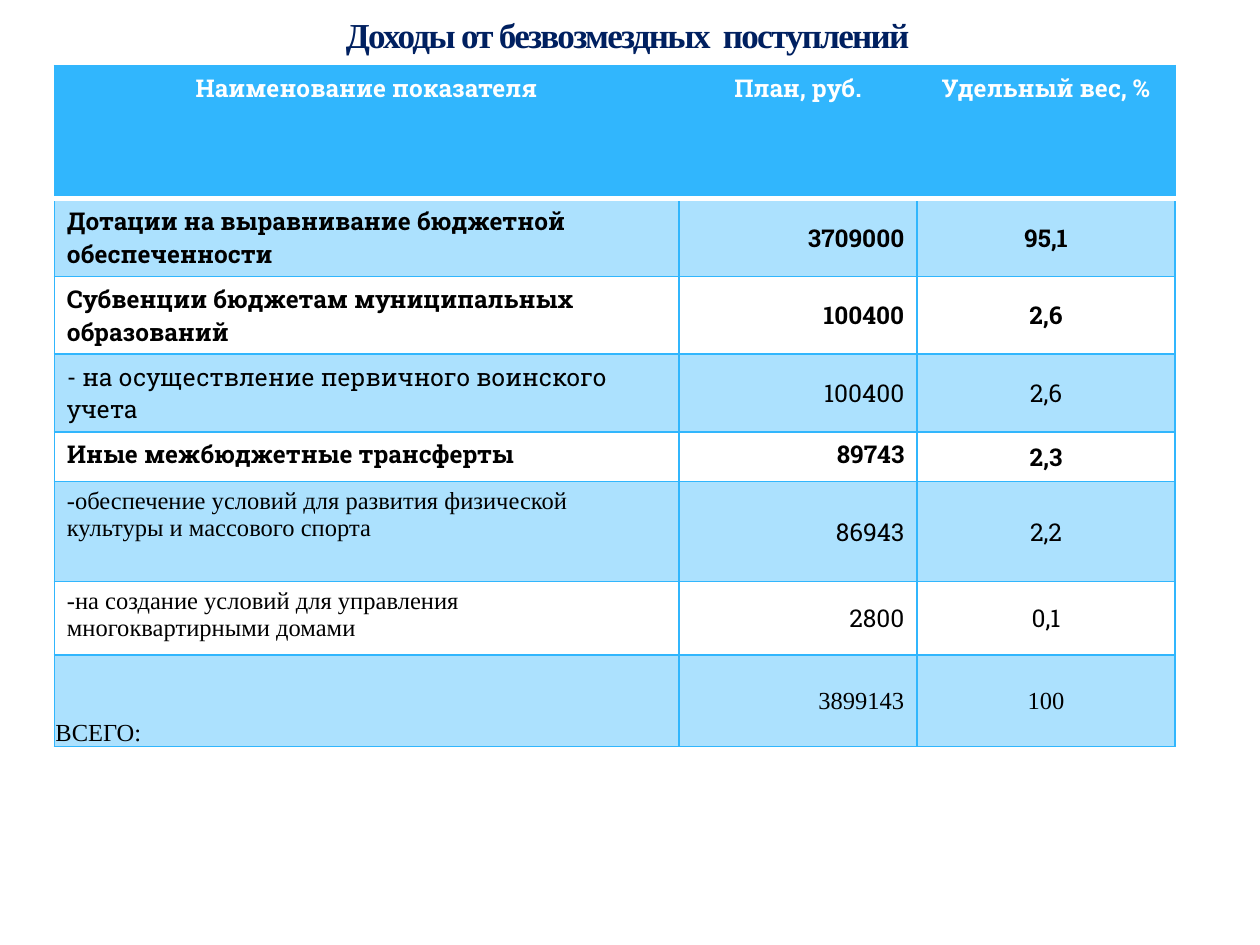
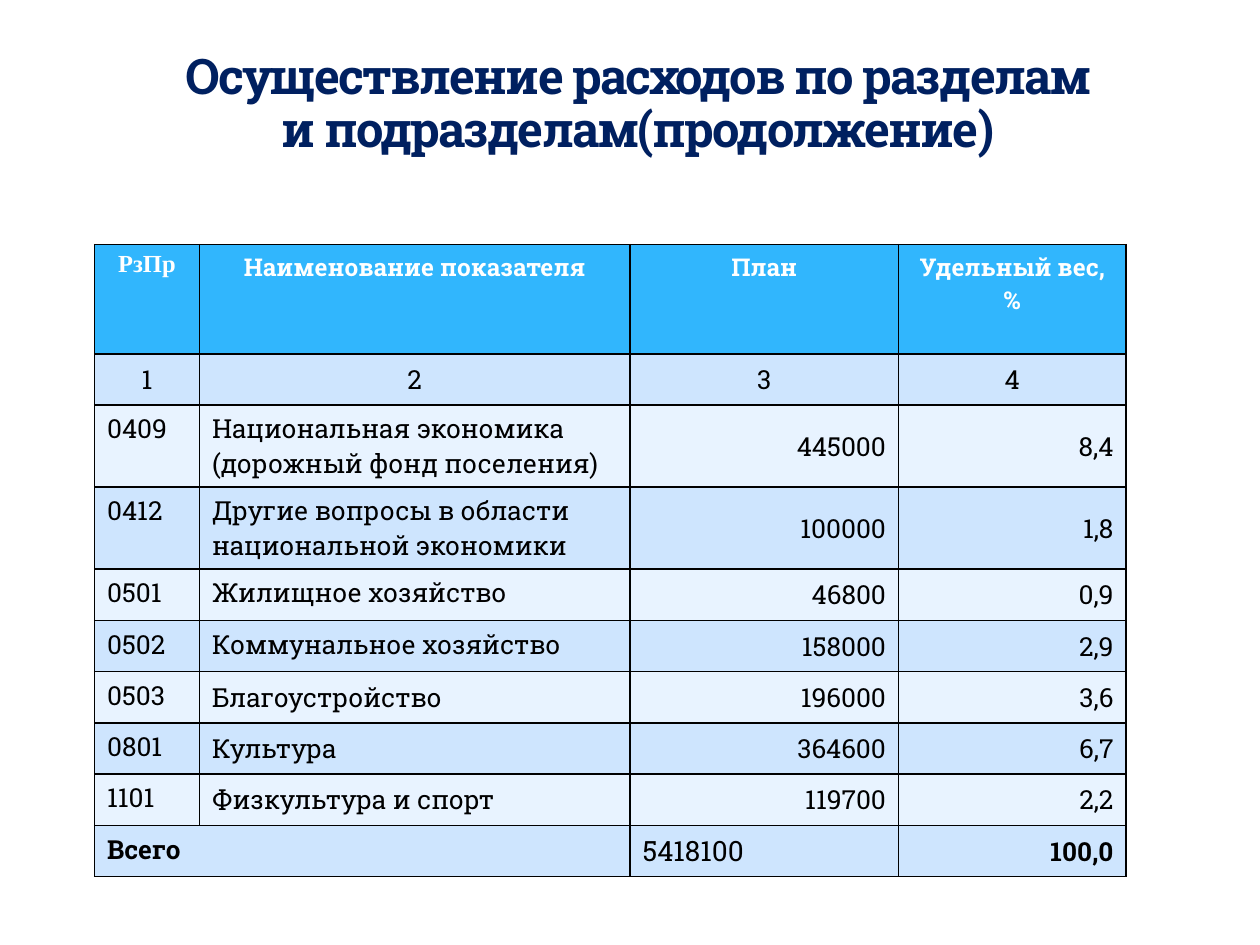
from dataclasses import dataclass, replace

from lxml import etree
from pptx import Presentation
from pptx import util as u
from pptx.dml import color
from pptx.enum import text
from pptx.oxml import ns

Pt = u.Pt
COLORS = {"title": "002060", "head": "31B6FD", "white": "FFFFFF", "ink": "000000",
          "band_dark": "CEE5FE", "band_light": "E8F3FF"}
SLAB, TIMES = "Roboto Slab", "Times New Roman"
ALIGN = {"l": text.PP_ALIGN.LEFT, "c": text.PP_ALIGN.CENTER, "r": text.PP_ALIGN.RIGHT}
ANCHOR = {"t": text.MSO_ANCHOR.TOP, "m": text.MSO_ANCHOR.MIDDLE, "b": text.MSO_ANCHOR.BOTTOM}


@dataclass(frozen=True)
class Style:
    size: float
    font: str = SLAB
    bold: bool = False
    color: str = "ink"
    align: str = "l"
    anchor: str = "t"


@dataclass(frozen=True)
class Entry:
    words: str
    style: Style


@dataclass(frozen=True)
class Band:
    """One table row: its entries, height and fill (None leaves it clear)."""
    entries: list[Entry]
    height: float
    fill: str | None
    opacity: int = 100


@dataclass(frozen=True)
class Grid:
    left: float
    top: float
    columns: list[float]
    bands: list[Band]
    border: str


HEADING = Style(14, bold=True, color="white", align="c")


def rgb(name: str) -> color.RGBColor:
    return color.RGBColor.from_string(COLORS[name])


def write(frame, entry: Entry):
    """Write one styled run and return it."""
    style = entry.style
    paragraph = frame.paragraphs[0]
    paragraph.alignment = ALIGN[style.align]
    run = paragraph.add_run()
    run.text = entry.words
    run.font.size, run.font.name, run.font.bold = Pt(style.size), style.font, style.bold
    run.font.color.rgb = rgb(style.color)
    return run


def add_title(slide, entry: Entry, left: float, top: float, height: float) -> None:
    frame = slide.shapes.add_textbox(Pt(left), Pt(top), Pt(553), Pt(height)).text_frame
    frame.word_wrap = True
    frame.auto_size = text.MSO_AUTO_SIZE.NONE
    frame.vertical_anchor = ANCHOR[entry.style.anchor]
    frame.margin_top = frame.margin_bottom = 0
    run = write(frame, entry)
    frame.paragraphs[0].line_spacing = 0.9
    run.font._element.set("spc", "-100")


def set_border(cell, side: str, name: str, width: float = 1) -> None:
    """Draw one side (L, R, T or B) of a cell, replacing any earlier line there."""
    props = cell._tc.get_or_add_tcPr()
    tag = ns.qn(f"a:ln{side}")
    line = props.find(tag)
    if line is None:
        line = etree.SubElement(props, tag)
    else:
        for child in list(line):
            line.remove(child)
    line.set("w", str(Pt(width)))
    fill = etree.SubElement(line, ns.qn("a:solidFill"))
    etree.SubElement(fill, ns.qn("a:srgbClr"), val=COLORS[name])


def set_fill(cell, band: Band) -> None:
    if band.fill is None:
        cell.fill.background()
        return
    cell.fill.solid()
    cell.fill.fore_color.rgb = rgb(band.fill)
    if band.opacity < 100:
        tint = cell._tc.tcPr.find(f".//{ns.qn('a:solidFill')}[last()]/{ns.qn('a:srgbClr')}")
        for fill in cell._tc.tcPr.findall(ns.qn("a:solidFill")):
            tint = fill.find(ns.qn("a:srgbClr"))
        etree.SubElement(tint, ns.qn("a:alpha"), val=str(band.opacity * 1000))


def add_grid(slide, grid: Grid):
    height = sum(band.height for band in grid.bands)
    table = slide.shapes.add_table(len(grid.bands), len(grid.columns), Pt(grid.left),
                                   Pt(grid.top), Pt(sum(grid.columns)), Pt(height)).table
    table.horz_banding = False
    for column, width in zip(table.columns, grid.columns):
        column.width = Pt(width)
    for row, band in zip(table.rows, grid.bands):
        row.height = Pt(band.height)
        for cell, entry in zip(row.cells, band.entries):
            for side in "LRTB":
                set_border(cell, side, grid.border)
            set_fill(cell, band)
            cell.vertical_anchor = ANCHOR[entry.style.anchor]
            if entry.words:
                write(cell.text_frame, entry)
    return table


def add_income_slide(slide) -> None:
    # Rows: name, plan, share, height, bold, name font, figure font
    incomes = [
        ("Дотации на выравнивание бюджетной обеспеченности", "3709000", "95,1", 42, True, SLAB, SLAB),
        ("Субвенции бюджетам муниципальных образований", "100400", "2,6", 42, True, SLAB, SLAB),
        ("- на осуществление первичного воинского учета", "100400", "2,6", 42, False, SLAB, SLAB),
        ("Иные межбюджетные трансферты", "89743", "2,3", 28.5, True, SLAB, SLAB),
        ("-обеспечение условий для развития физической культуры и массового спорта",
         "86943", "2,2", 57, False, TIMES, SLAB),
        ("-на создание условий для управления многоквартирными домами",
         "2800", "0,1", 42, False, TIMES, SLAB),
        ("ВСЕГО:", "3899143", "100", 52.5, False, TIMES, TIMES),
    ]
    headings = ["Наименование показателя", "План, руб.", "Удельный вес, %"]
    bands = [Band([Entry(words, HEADING) for words in headings], 76, "head")]
    for index, (name, plan, share, height, bold, name_font, figure_font) in enumerate(incomes):
        label = Style(14, name_font, bold, anchor="b" if name == "ВСЕГО:" else "t")
        figure = Style(14, figure_font, bold, align="r", anchor="t" if plan == "89743" else "m")
        entries = [Entry(name, label), Entry(plan, figure),
                   Entry(share, replace(figure, align="c", anchor="m"))]
        bands.append(Band(entries, height, None if index % 2 else "head", 40))

    table = add_grid(slide, Grid(31, 37.5, [357, 136, 147.5], bands, "head"))
    # White rule under the heading row
    for column in range(len(headings)):
        set_border(table.cell(0, column), "B", "white", 3)
        set_border(table.cell(1, column), "T", "white", 3)
    total = table.cell(len(incomes), 0)
    total.margin_left = total.margin_right = total.margin_top = Pt(0.7)
    total.margin_bottom = 0

    style = Style(20, TIMES, True, "title", "c", "m")
    add_title(slide, Entry("Доходы от безвозмездных  поступлений", style), 82, 0, 42)


def add_expense_slide(slide) -> None:
    expenses = [
        ("0409", "Национальная экономика (дорожный фонд поселения)", "445000", "8,4"),
        ("0412", "Другие вопросы в области национальной экономики", "100000", "1,8"),
        ("0501", "Жилищное хозяйство", "46800", "0,9"),
        ("0502", "Коммунальное хозяйство", "158000", "2,9"),
        ("0503", "Благоустройство", "196000", "3,6"),
        ("0801", "Культура", "364600", "6,7"),
        ("1101", "Физкультура и спорт", "119700", "2,2"),
    ]
    label = Style(15)
    middle = replace(label, anchor="m")
    number = replace(middle, align="c")
    figure = replace(middle, align="r")

    # Heading, column numbers, sections, total
    headings = ["Наименование показателя", "План", "Удельный вес, %"]
    rows = [[Entry("РзПр", replace(HEADING, font=TIMES))]
            + [Entry(words, HEADING) for words in headings],
            [Entry(words, number) for words in "1234"]]
    for code, name, plan, share in expenses:
        name_style = middle if code >= "0503" else label
        rows.append([Entry(code, label), Entry(name, name_style),
                     Entry(plan, figure), Entry(share, figure)])
    rows.append([Entry("Всего", replace(label, bold=True)), Entry("", label),
                 Entry("5418100", replace(middle, size=16)),
                 Entry("100,0", replace(figure, bold=True))])

    bands = [Band(rows[0], 62.5, "head")]
    for index, entries in enumerate(rows[1:]):
        bands.append(Band(entries, 29.3, "band_light" if index % 2 else "band_dark"))
    table = add_grid(slide, Grid(54, 139.75, [60, 246, 153.5, 130], bands, "ink"))
    last = len(rows) - 1
    table.cell(last, 0).merge(table.cell(last, 1))

    style = Style(28, SLAB, True, "title", "c", "b")
    add_title(slide, Entry("Осуществление расходов по разделам и подразделам(продолжение)", style),
              88, 54.5, 36)


def main() -> None:
    deck = Presentation()
    deck.slide_width, deck.slide_height = Pt(720), Pt(540)
    for build in (add_income_slide, add_expense_slide):
        build(deck.slides.add_slide(deck.slide_layouts[6]))
    deck.save("out.pptx")


if __name__ == "__main__":
    main()
